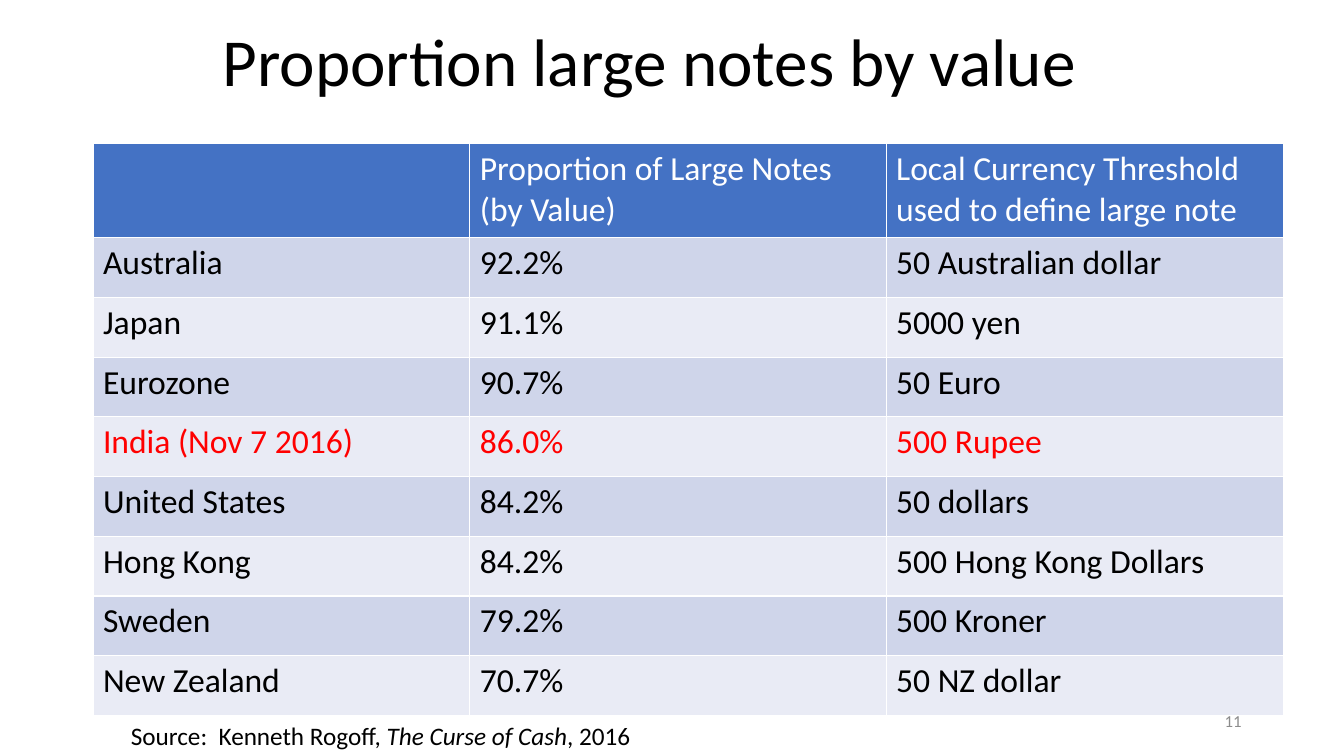
from dataclasses import dataclass

from pptx import Presentation
from pptx.dml.color import RGBColor as Rgb
from pptx.enum.text import MSO_ANCHOR as Anchor, PP_ALIGN as Align
from pptx.util import Pt


@dataclass(frozen=True)
class Theme:
    face: str = "Calibri"
    ink: str = "000000"
    light: str = "FFFFFF"
    alert: str = "FF0000"
    muted: str = "8C8C8C"
    head: str = "4472C4"
    bands: tuple = ("CFD5EA", "E9EBF5")
    title: int = 48
    body: int = 24
    source: int = 18
    number: int = 12


class Page:
    def __init__(self, slide, theme):
        self.slide = slide
        self.theme = theme

    def style(self, para, size, color):
        font = para.font
        font.name = self.theme.face
        font.size = Pt(size)
        font.bold = False
        font.color.rgb = Rgb.from_string(color)

    def text(self, box, parts, size, color, align=Align.LEFT, anchor=Anchor.TOP, lead=1.0):
        """Add a text box; parts are (words, italic) pairs."""
        frame = self.slide.shapes.add_textbox(*map(Pt, box)).text_frame
        frame.word_wrap = True
        frame.vertical_anchor = anchor
        para = frame.paragraphs[0]
        para.alignment = align
        para.line_spacing = lead
        self.style(para, size, color)
        for words, slant in parts:
            run = para.add_run()
            run.text = words
            if slant:
                run.font.italic = True

    def table(self, left, top, widths, heights, rows, marked):
        """Add a banded table whose marked row is in the alert colour."""
        theme = self.theme
        size = (sum(widths), sum(heights))
        grid = self.slide.shapes.add_table(
            len(rows), len(widths), *map(Pt, (left, top, *size))).table
        for col, width in zip(grid.columns, widths):
            col.width = Pt(width)
        for i, (row, height) in enumerate(zip(rows, heights)):
            grid.rows[i].height = Pt(height)
            fill = theme.bands[(i - 1) % 2] if i else theme.head
            color = theme.ink if i else theme.light
            if row[0] == marked:
                color = theme.alert
            for j, words in enumerate(row):
                cell = grid.cell(i, j)
                cell.fill.solid()
                cell.fill.fore_color.rgb = Rgb.from_string(fill)
                cell.text = words
                self.style(cell.text_frame.paragraphs[0], theme.body, color)


INDIA = "India (Nov 7 2016)"
ROWS = [
    ("", "Proportion of Large Notes (by Value)",
     "Local Currency Threshold used to define large note"),
    ("Australia", "92.2%", "50 Australian dollar"),
    ("Japan", "91.1%", "5000 yen"),
    ("Eurozone", "90.7%", "50 Euro"),
    (INDIA, "86.0%", "500 Rupee"),
    ("United States", "84.2%", "50 dollars"),
    ("Hong Kong", "84.2%", "500 Hong Kong Dollars"),
    ("Sweden", "79.2%", "500 Kroner"),
    ("New Zealand", "70.7%", "50 NZ dollar"),
]


def main():
    deck = Presentation()
    deck.slide_width, deck.slide_height = Pt(960), Pt(540)
    theme = Theme()
    page = Page(deck.slides.add_slide(deck.slide_layouts[6]), theme)
    page.text((34.5, 0, 859, 93), [("Proportion large notes by value", False)],
              theme.title, theme.ink, Align.CENTER, Anchor.MIDDLE, 0.9)
    heights = [67.4] + [42.67] * (len(ROWS) - 1)
    page.table(66.4, 102.4, (269.2, 297.4, 283.6), heights, ROWS, INDIA)
    page.text((86.4, 511.2, 375, 51),
              [("Source:  Kenneth Rogoff, ", False),
               ("The Curse of Cash", True), (", 2016", False)],
              theme.source, theme.ink)
    page.text((678, 500.5, 216, 28.8), [("11", False)],
              theme.number, theme.muted, Align.RIGHT, Anchor.MIDDLE)
    deck.save("out.pptx")


if __name__ == "__main__":
    main()
